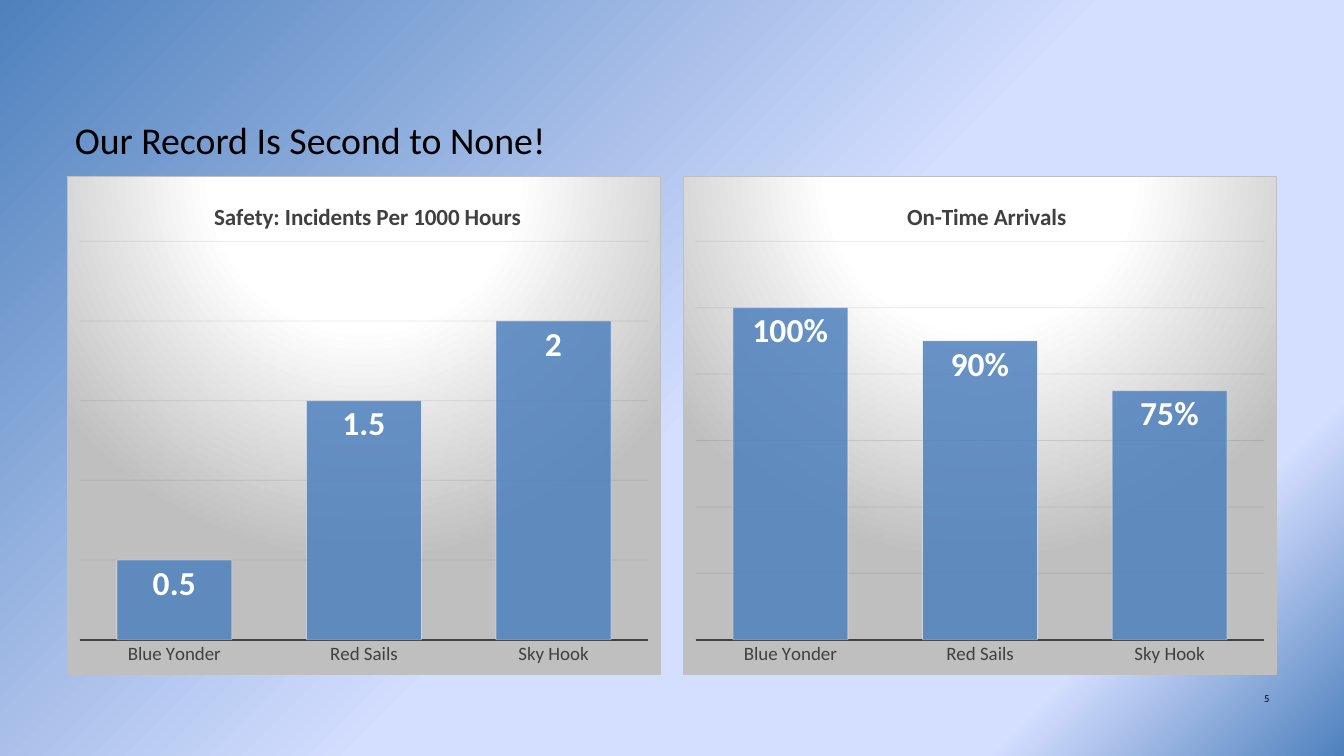
from pptx import Presentation
from pptx.chart.data import CategoryChartData
from pptx.dml.color import RGBColor
from pptx.enum.chart import XL_CHART_TYPE, XL_LABEL_POSITION, XL_TICK_MARK
from pptx.enum.text import MSO_ANCHOR, MSO_AUTO_SIZE, PP_ALIGN
from pptx.oxml import parse_xml
from pptx.oxml.ns import nsdecls, qn
from pptx.util import Inches, Pt

WIDTH, HEIGHT = 17.78, 10
MARGIN, GAP = 0.89, 0.3
CHART_WIDTH = (WIDTH - 2 * MARGIN - GAP) / 2
CHART_TOP, CHART_HEIGHT = 2.33, 6.6

FONT = "Calibri"
BLACK = RGBColor(0x00, 0x00, 0x00)
WHITE = RGBColor(0xFF, 0xFF, 0xFF)
DARK = RGBColor(0x40, 0x40, 0x40)
GRID = RGBColor(0x0D, 0x0D, 0x0D)
SILVER = RGBColor(0xBF, 0xBF, 0xBF)
BLUE = RGBColor(0x4F, 0x81, 0xBD)
PALE_BLUE = RGBColor(0xD4, 0xDE, 0xFF)

AIRLINES = ["Blue Yonder", "Red Sails", "Sky Hook"]


def format_font(font, size, color, bold=False):
    font.name, font.size, font.bold = FONT, Pt(size), bold
    font.color.rgb = color


def write_text(frame, text, size=18, color=BLACK, bold=False, align=PP_ALIGN.LEFT):
    para = frame.paragraphs[0]
    para.alignment = align
    span = para.add_run()
    span.text = text
    format_font(span.font, size, color, bold)


def set_alpha(holder, percent):
    """Make the solid colours inside an XML element translucent."""
    for color in holder.iter(qn("a:srgbClr")):
        color.append(parse_xml(f'<a:alpha {nsdecls("a")} val="{percent * 1000}"/>'))


def gradient_xml(stops, direction):
    """Stops are (position in percent, colour, opacity in percent)."""
    marks = "".join(
        f'<a:gs pos="{position * 1000}"><a:srgbClr val="{color}">'
        f'<a:alpha val="{alpha * 1000}"/></a:srgbClr></a:gs>'
        for position, color, alpha in stops)
    return (f'<a:gradFill {nsdecls("a")} rotWithShape="1">'
            f'<a:gsLst>{marks}</a:gsLst>{direction}</a:gradFill>')


def paint_background(page):
    page.background.fill.solid()
    solid = page.element.find(".//" + qn("p:bgPr")).find(qn("a:solidFill"))
    stops = [(0, BLUE, 100), (53, PALE_BLUE, 100), (83, PALE_BLUE, 100), (100, BLUE, 70)]
    gradient = gradient_xml(stops, '<a:lin ang="2700000" scaled="0"/>')
    solid.getparent().replace(solid, parse_xml(gradient))


def paint_chart_area(chart):
    stops = [(0, WHITE, 100), (39, WHITE, 100), (100, SILVER, 100)]
    gradient = gradient_xml(stops, '<a:path path="circle"><a:fillToRect l="50000" '
                            't="-80000" r="50000" b="180000"/></a:path>')
    area = parse_xml(f'<c:spPr {nsdecls("c", "a")}>{gradient}<a:ln w="9525"><a:solidFill>'
                     f'<a:srgbClr val="{SILVER}"/></a:solidFill></a:ln></c:spPr>')
    chart.element.find(qn("c:chart")).addnext(area)


def place_part(part, before, **shares):
    """Fix a chart part at shares of the chart's size (x, y, w, h)."""
    for old in part.findall(qn("c:layout")):
        part.remove(old)
    target = '<c:layoutTarget val="inner"/>' if "w" in shares else ""
    modes = "".join(f'<c:{key}Mode val="edge"/>' for key in "xy")
    values = "".join(f'<c:{key} val="{value}"/>' for key, value in shares.items())
    before.addprevious(parse_xml(
        f'<c:layout {nsdecls("c")}><c:manualLayout>{target}{modes}{values}'
        '</c:manualLayout></c:layout>'))


def add_column_chart(page, column, title, values, title_left, top_value, step,
                     number_format="General"):
    data = CategoryChartData(number_format=number_format)
    data.categories = AIRLINES
    data.add_series("Series 1", values)
    left = MARGIN + column * (CHART_WIDTH + GAP)
    chart = page.shapes.add_chart(
        XL_CHART_TYPE.COLUMN_CLUSTERED, Inches(left), Inches(CHART_TOP),
        Inches(CHART_WIDTH), Inches(CHART_HEIGHT), data).chart
    format_font(chart.font, 10, BLACK)
    chart.has_legend = False
    paint_chart_area(chart)

    # Title and plot area
    write_text(chart.chart_title.text_frame, title, size=22, color=DARK, bold=True,
               align=PP_ALIGN.CENTER)
    heading = chart.element.find(".//" + qn("c:title"))
    place_part(heading, heading.find(qn("c:overlay")), x=title_left, y=0.04)
    plot_area = chart.element.find(".//" + qn("c:plotArea"))
    place_part(plot_area, plot_area.find(qn("c:barChart")), x=0.02, y=0.13, w=0.96, h=0.8)

    # Axes
    names = chart.category_axis
    names.major_tick_mark = names.minor_tick_mark = XL_TICK_MARK.NONE
    format_font(names.tick_labels.font, 18, DARK)
    names.format.line.color.rgb = DARK
    names.format.line.width = Pt(1.5)
    scale = chart.value_axis
    scale.visible = False
    scale.minimum_scale, scale.maximum_scale, scale.major_unit = 0, top_value, step
    scale.has_major_gridlines = True
    grid = scale.major_gridlines.format.line
    grid.color.rgb = GRID
    grid.width = Pt(0.75)
    set_alpha(scale.major_gridlines.format.line.fill._xPr, 10)

    # Columns and their labels
    plot = chart.plots[0]
    plot.gap_width = 65
    plot.vary_by_categories = False
    series = plot.series[0]
    series.format.fill.solid()
    series.format.fill.fore_color.rgb = BLUE
    shape_format = series.format.fill._xPr
    set_alpha(shape_format, 85)
    series.format.line.color.rgb = WHITE
    series.format.line.width = Pt(0.75)
    set_alpha(shape_format.find(qn("a:ln")), 50)
    labels = series.data_labels
    labels.show_value = True
    labels.position = XL_LABEL_POSITION.INSIDE_END
    labels.number_format = number_format
    labels.number_format_is_linked = False
    format_font(labels.font, 32, WHITE, bold=True)


def add_title(page, text):
    title = page.shapes.title
    title.left, title.top = Inches(MARGIN), Inches(0.52)
    title.width, title.height = Inches(WIDTH - 2 * MARGIN), Inches(1.67)
    frame = title.text_frame
    frame.vertical_anchor = MSO_ANCHOR.BOTTOM
    frame.auto_size = MSO_AUTO_SIZE.NONE
    write_text(frame, text, size=36)


def add_page_number(page, text):
    width = 4.15
    box = page.shapes.add_textbox(Inches(WIDTH - MARGIN - width), Inches(9.11),
                                  Inches(width), Inches(0.69))
    box.text_frame.word_wrap = True
    write_text(box.text_frame, text, size=10, align=PP_ALIGN.RIGHT)


def main():
    deck = Presentation()
    deck.slide_width, deck.slide_height = Inches(WIDTH), Inches(HEIGHT)
    page = deck.slides.add_slide(deck.slide_layouts[5])
    paint_background(page)
    add_title(page, "Our Record Is Second to None!")
    add_page_number(page, "5")
    add_column_chart(page, 0, "Safety: Incidents Per 1000 Hours", [0.5, 1.5, 2],
                     title_left=0.24, top_value=2.5, step=0.5)
    add_column_chart(page, 1, "On-Time Arrivals", [1, 0.9, 0.75],
                     title_left=0.37, top_value=1.2, step=0.2, number_format="0%")
    deck.save("out.pptx")


if __name__ == "__main__":
    main()
